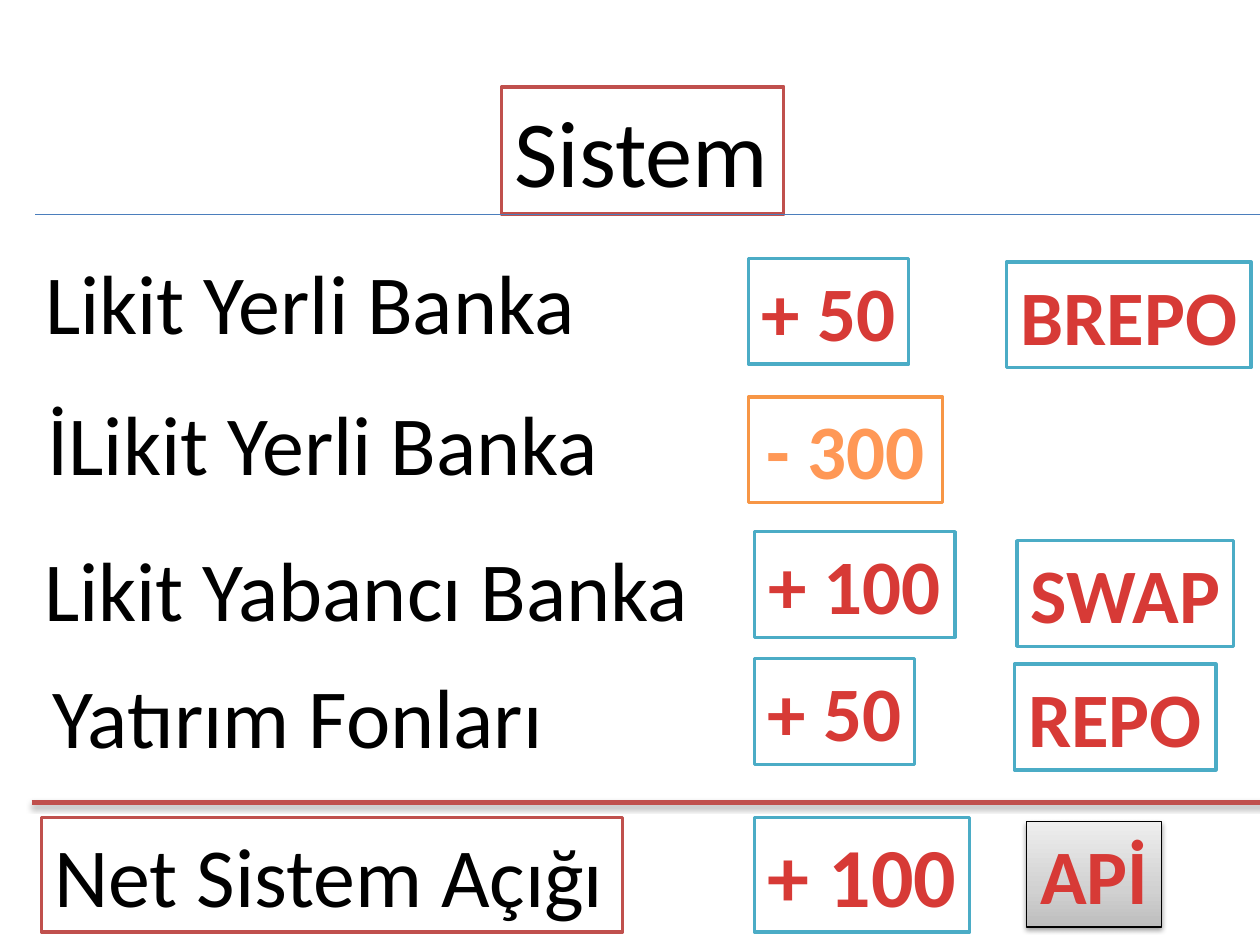
from copy import deepcopy
from dataclasses import dataclass

from pptx import Presentation
from pptx.dml.color import RGBColor
from pptx.enum.shapes import MSO_CONNECTOR, MSO_SHAPE
from pptx.enum.text import MSO_ANCHOR, MSO_AUTO_SIZE, PP_ALIGN
from pptx.oxml import parse_xml
from pptx.oxml.ns import nsdecls, qn
from pptx.util import Cm, Pt

RECTANGLE = MSO_SHAPE.RECTANGLE
STRAIGHT = MSO_CONNECTOR.STRAIGHT
LEFT, CENTER = PP_ALIGN.LEFT, PP_ALIGN.CENTER
TOP = MSO_ANCHOR.TOP
FIXED, GROW = MSO_AUTO_SIZE.NONE, MSO_AUTO_SIZE.SHAPE_TO_FIT_TEXT

BLACK, WHITE = "000000", "FFFFFF"
RED, TEAL, ORANGE, BLUE = "C0504D", "4BACC6", "F79646", "4B7EBC"
FIGURE_RED, FIGURE_ORANGE = "D73A36", "FF9856"
TALL, LOW = 2.31, 2.13


@dataclass
class Entry:
    text: str
    left: float
    top: float
    width: float
    height: float = LOW
    size: int = 44
    color: str = FIGURE_RED
    border: str = TEAL
    bold: bool = True
    align: PP_ALIGN = CENTER


def label(text: str, left: float, top: float, width: float, border: str = "") -> Entry:
    return Entry(text, left, top, width, TALL, 48, BLACK, border, False, LEFT)


TITLE = Entry("Sistem", 10.11, 1.75, 5.69, 2.57, 54, BLACK, RED, False, LEFT)
LABELS = [
    label("Likit Yerli Banka", 0.66, 4.93, 11.3),
    label("İLikit Yerli Banka", 0.71, 7.77, 11.73),
    label("Likit Yabancı Banka", 0.64, 10.72, 13.64),
    label("Yatırım Fonları", 0.81, 13.28, 10.52),
]
NET_GAP = label("Net Sistem Açığı", 0.84, 16.48, 11.71, RED)
AMOUNTS = [
    Entry("+ 50", 15.09, 5.21, 3.23),
    Entry("- 300", 15.09, 8, 3.91, color=FIGURE_ORANGE, border=ORANGE),
    Entry("+ 100", 15.21, 10.72, 4.04),
    Entry("+ 50", 15.21, 13.28, 3.23),
    Entry("+ 100", 15.21, 16.48, 4.34, TALL, 48),
]
INSTRUMENTS = [
    Entry("BREPO", 20.29, 5.28, 4.93),
    Entry("REPO", 20.45, 13.39, 4.06),
    Entry("SWAP", 20.5, 10.9, 4.37),
]
OPEN_MARKET = Entry("APİ", 20.7, 16.56, 2.72, border=BLACK)


def rgb(value: str) -> RGBColor:
    return RGBColor.from_string(value)


def write(shape, entry: Entry, sizing: MSO_AUTO_SIZE = GROW) -> None:
    frame = shape.text_frame
    frame.text = entry.text
    frame_format = {"word_wrap": False, "vertical_anchor": TOP, "auto_size": sizing}
    for name, value in frame_format.items():
        setattr(frame, name, value)
    paragraph = frame.paragraphs[0]
    paragraph.alignment = entry.align
    font = paragraph.runs[0].font
    font_format = {"name": "Calibri", "size": Pt(entry.size), "bold": entry.bold}
    for name, value in font_format.items():
        setattr(font, name, value)
    font.color.rgb = rgb(entry.color)


def outline(shape, entry: Entry, weight: float = 2) -> None:
    shape.fill.solid()
    shape.fill.fore_color.rgb = rgb(WHITE)
    shape.line.color.rgb = rgb(entry.border)
    shape.line.width = Pt(weight)


def bounds(entry: Entry) -> list[int]:
    return [Cm(v) for v in (entry.left, entry.top, entry.width, entry.height)]


def add_label(slide, entry: Entry) -> None:
    write(slide.shapes.add_textbox(*bounds(entry)), entry)


def add_box(slide, entry: Entry, weight: float = 2):
    box = slide.shapes.add_shape(RECTANGLE, *bounds(entry))
    box.shadow.inherit = False
    outline(box, entry, weight)
    write(box, entry)
    return box


def add_rule(slide, start: float, end: float, y: float, color: str, weight: float):
    rule = slide.shapes.add_connector(STRAIGHT, Cm(start), Cm(y), Cm(end), Cm(y))
    rule.line.color.rgb = rgb(color)
    rule.line.width = Pt(weight)
    properties = rule._element.spPr
    properties.append(parse_xml(f"<a:effectLst {nsdecls('a')}/>"))
    return rule


def cast_shadow(shape, distance: float, opacity: int) -> None:
    effects = shape._element.spPr.find(qn("a:effectLst"))
    effects.append(parse_xml(
        f'<a:outerShdw {nsdecls("a")} blurRad="{Pt(3.1)}" dist="{Pt(distance)}" '
        f'dir="5400000" rotWithShape="0"><a:srgbClr val="{BLACK}">'
        f'<a:alpha val="{opacity * 1000}"/></a:srgbClr></a:outerShdw>'))


def shade(shape) -> None:
    """Grey gradient with three stops, darkest at the bottom."""
    fill = shape.fill
    fill.gradient()
    fill.gradient_angle = 90
    stop_list = shape._element.spPr.find(qn("a:gradFill")).find(qn("a:gsLst"))
    stop_list.insert(1, deepcopy(stop_list[0]))
    stops = [(0, "BDBDBD"), (0.35, "D1D1D1"), (1, "EEEEEE")]
    for stop, (position, color) in zip(fill.gradient_stops, stops):
        stop.position = position
        stop.color.rgb = rgb(color)


def main() -> None:
    deck = Presentation()
    deck.slide_width, deck.slide_height = Cm(25.4), Cm(19.05)
    slide = deck.slides.add_slide(deck.slide_layouts[5])

    # Title of fixed size with the thin rule beneath it
    title = slide.shapes.title
    title.left, title.top, title.width, title.height = bounds(TITLE)
    outline(title, TITLE)
    write(title, TITLE, FIXED)
    for start, end in ((0.71, 13.28), (13.28, 25.4)):
        add_rule(slide, start, end, 4.32, BLUE, 0.75)

    # Participants and their balances
    for entry in LABELS:
        add_label(slide, entry)
    for entry in AMOUNTS + INSTRUMENTS:
        add_box(slide, entry)

    # Total below the heavy rule
    total_rule = add_rule(slide, 0.64, 25.5, 16.18, RED, 3)
    cast_shadow(total_rule, 1.8, 35)
    add_box(slide, NET_GAP)
    open_market = add_box(slide, OPEN_MARKET, 0.75)
    shade(open_market)
    cast_shadow(open_market, 1.6, 38)

    deck.save("out.pptx")


if __name__ == "__main__":
    main()
